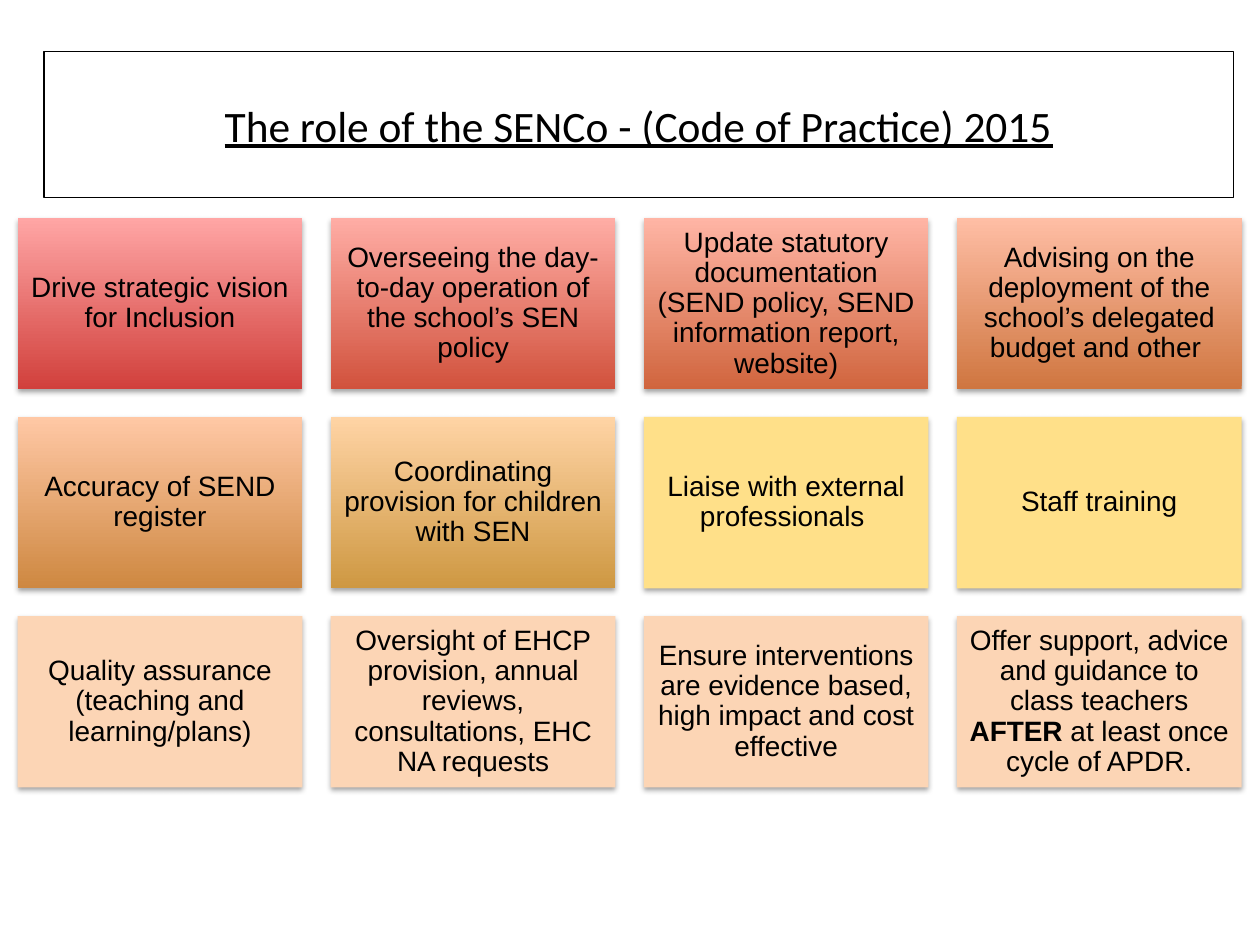
from lxml.etree import SubElement
from pptx import Presentation
from pptx.dml.color import RGBColor
from pptx.enum.shapes import MSO_SHAPE as Preset
from pptx.enum.text import MSO_ANCHOR as Anchor, PP_ALIGN as Align
from pptx.oxml.ns import qn
from pptx.util import Inches, Pt

BLACK = RGBColor(0x00, 0x00, 0x00)
YELLOW = RGBColor(0xFF, 0xE0, 0x89)
PEACH = RGBColor(0xFC, 0xD5, 0xB5)
RED_DARK, RED_LIGHT = RGBColor(0xD1, 0x40, 0x3C), RGBColor(0xFF, 0xA6, 0xA5)
BRICK_DARK, BRICK_LIGHT = RGBColor(0xD1, 0x52, 0x3D), RGBColor(0xFF, 0xAD, 0xA5)
RUST_DARK, RUST_LIGHT = RGBColor(0xD0, 0x65, 0x3E), RGBColor(0xFF, 0xB5, 0xA5)
COPPER_DARK, COPPER_LIGHT = RGBColor(0xCF, 0x76, 0x40), RGBColor(0xFF, 0xBE, 0xA5)
ORANGE_DARK, ORANGE_LIGHT = RGBColor(0xCE, 0x88, 0x41), RGBColor(0xFF, 0xC8, 0xA5)
OCHRE_DARK, OCHRE_LIGHT = RGBColor(0xCE, 0x98, 0x42), RGBColor(0xFF, 0xD4, 0xA5)

TITLE = "The role of the SENCo - (Code of Practice) 2015"
TITLE_FONT = {"name": "Calibri", "size": Pt(24.8), "underline": True}
CARD_FONT = {"name": "Arial", "size": Pt(16)}

COLUMNS = 4
CARD_LEFT, CARD_TOP = 0.14, 1.73
CARD_WIDTH, CARD_HEIGHT = 2.26, 1.36
COLUMN_STEP, ROW_STEP = 2.485, 1.58

CARDS = [
    (["Drive strategic vision for Inclusion"], (RED_DARK, RED_LIGHT)),
    (["Overseeing the day-to-day operation of the school’s SEN policy"],
     (BRICK_DARK, BRICK_LIGHT)),
    (["Update statutory documentation (SEND policy, SEND information report, website)"],
     (RUST_DARK, RUST_LIGHT)),
    (["Advising on the deployment of the school’s delegated budget and other "],
     (COPPER_DARK, COPPER_LIGHT)),
    (["Accuracy of SEND register"], (ORANGE_DARK, ORANGE_LIGHT)),
    (["Coordinating provision for children with SEN"], (OCHRE_DARK, OCHRE_LIGHT)),
    (["Liaise with external professionals "], (YELLOW,)),
    (["Staff training"], (YELLOW,)),
    (["Quality assurance (teaching and learning/plans)"], (PEACH,)),
    (["Oversight of EHCP provision, annual reviews, consultations, EHC NA requests"],
     (PEACH,)),
    (["Ensure interventions are evidence based, high impact and cost effective"],
     (PEACH,)),
    (["Offer support, advice and guidance to class teachers ", "AFTER",
      " at least once cycle of APDR."], (PEACH,)),
]


def add_box(slide, left, top, width, height):
    shape = slide.shapes.add_shape(
        Preset.RECTANGLE, Inches(left), Inches(top), Inches(width), Inches(height))
    shape.shadow.inherit = False
    return shape


def write_text(shape, pieces, font_format, margins, line_spacing=1.0):
    frame = shape.text_frame
    frame.word_wrap = True
    frame.vertical_anchor = Anchor.MIDDLE
    for side, margin in zip(("left", "top", "right", "bottom"), margins):
        setattr(frame, f"margin_{side}", Inches(margin))
    paragraph = frame.paragraphs[0]
    paragraph.alignment = Align.CENTER
    paragraph.line_spacing = line_spacing
    for index, piece in enumerate(pieces):
        run = paragraph.add_run()
        run.text = piece
        run.font.color.rgb = BLACK
        run.font.bold = index % 2 == 1
        for name, value in font_format.items():
            setattr(run.font, name, value)


def fill_shape(shape, colors):
    if len(colors) == 1:
        shape.fill.solid()
        shape.fill.fore_color.rgb = colors[0]
        return
    shape.fill.gradient()
    shape.fill.gradient_angle = 90
    for stop, color in zip(shape.fill.gradient_stops, colors):
        stop.color.rgb = color


def add_shadow(shape):
    effects = shape._element.spPr.find(qn("a:effectLst"))
    shadow = SubElement(effects, qn("a:outerShdw"), {
        "blurRad": str(Pt(3.1)), "dist": str(Pt(1.8)),
        "dir": "5400000", "rotWithShape": "0"})
    color = SubElement(shadow, qn("a:srgbClr"), val=str(BLACK))
    SubElement(color, qn("a:alpha"), val="35000")


def add_title(slide):
    title = add_box(slide, 0.35, 0.41, 9.44, 1.16)
    title.fill.background()
    title.line.color.rgb = BLACK
    title.line.width = Pt(0.75)
    write_text(title, [TITLE], TITLE_FONT, (0.1, 0.05, 0.1, 0.05))


def add_card(slide, index, pieces, colors):
    row, column = divmod(index, COLUMNS)
    card = add_box(slide, CARD_LEFT + column * COLUMN_STEP,
                   CARD_TOP + row * ROW_STEP, CARD_WIDTH, CARD_HEIGHT)
    fill_shape(card, colors)
    card.line.fill.background()
    add_shadow(card)
    write_text(card, pieces, CARD_FONT, (0.07,) * 4, line_spacing=0.9)


def main():
    presentation = Presentation()
    presentation.slide_width = Inches(10)
    presentation.slide_height = Inches(7.5)
    slide = presentation.slides.add_slide(presentation.slide_layouts[6])
    add_title(slide)
    for index, (pieces, colors) in enumerate(CARDS):
        add_card(slide, index, pieces, colors)
    presentation.save("out.pptx")


if __name__ == "__main__":
    main()
